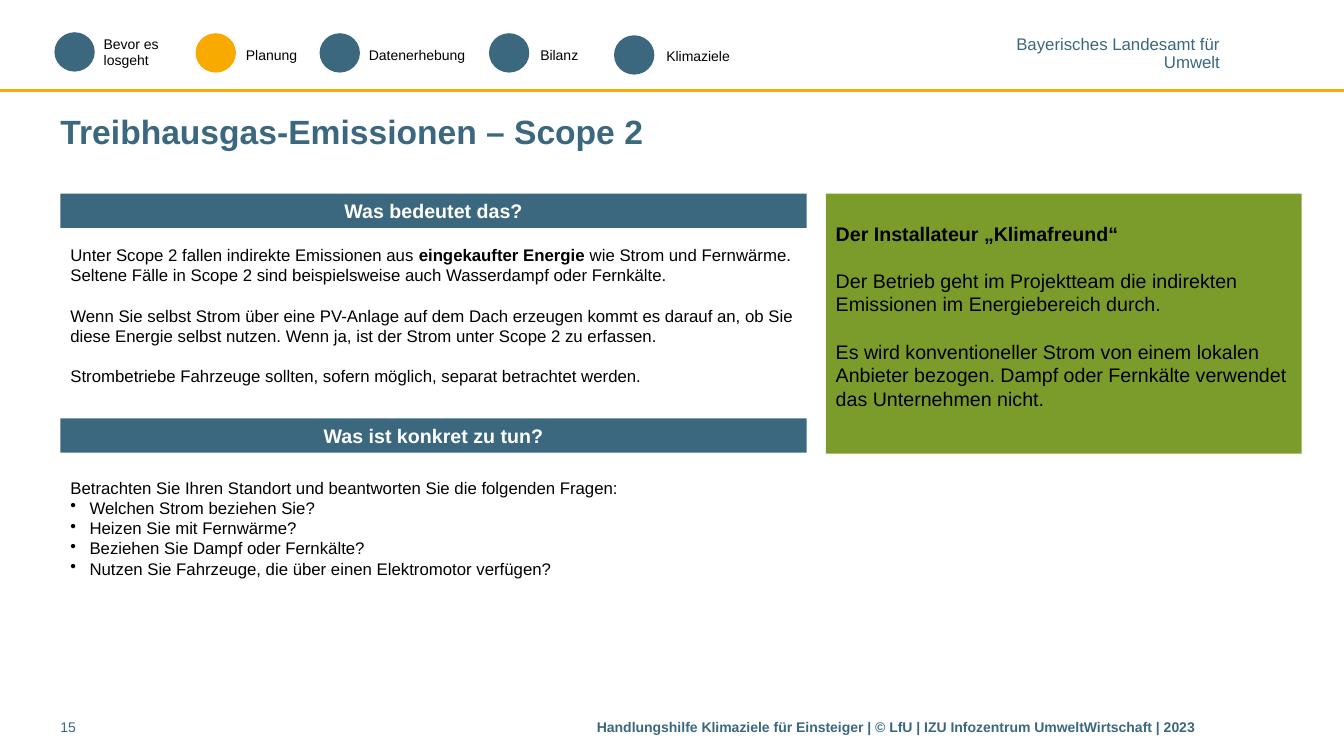
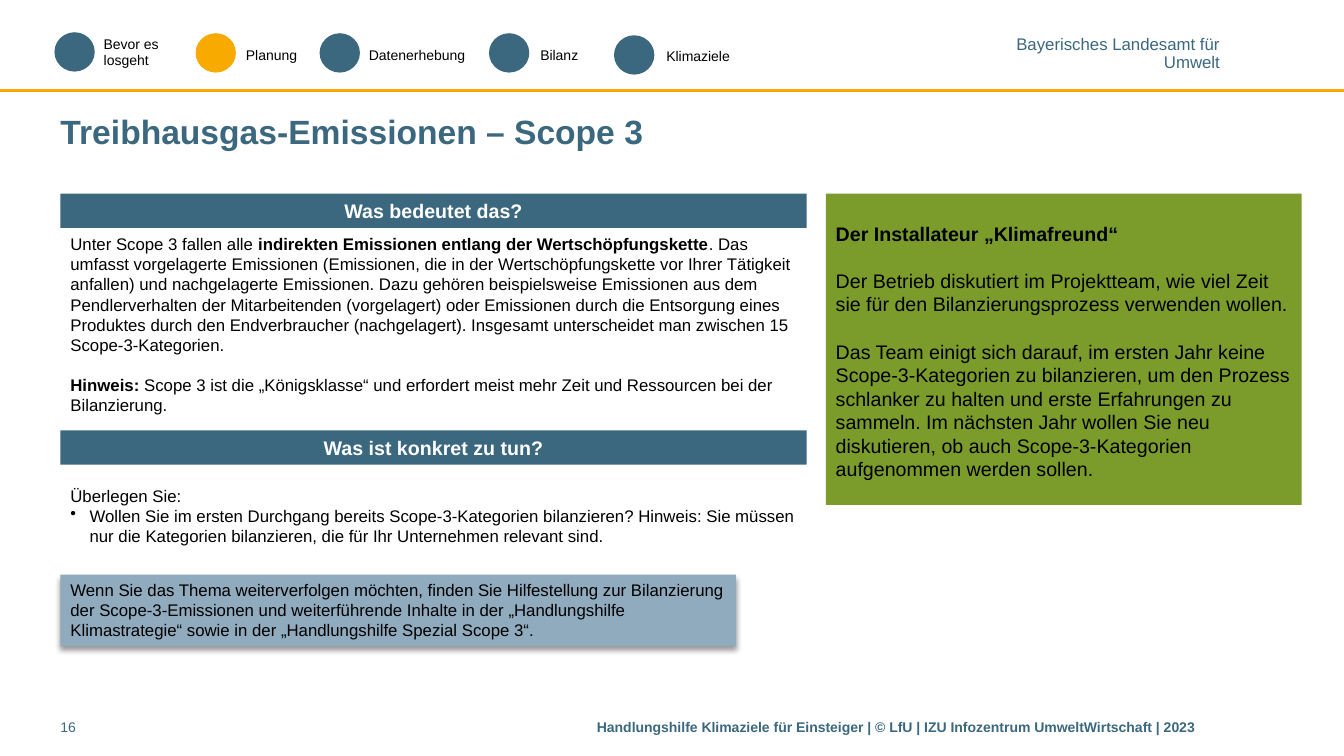
"""Build two slides on Scope 2 and Scope 3 greenhouse gas emissions."""

from dataclasses import dataclass

import pptx
import pptx.dml.color
import pptx.enum.shapes
import pptx.enum.text
import pptx.oxml
import pptx.oxml.ns
import pptx.presentation
import pptx.shapes.autoshape
import pptx.slide
import pptx.util
from pptx.util import Inches

Align = pptx.enum.text.PP_ALIGN
Anchor = pptx.enum.text.MSO_ANCHOR
ShapeKind = pptx.enum.shapes.MSO_SHAPE


@dataclass(frozen=True)
class Theme:
    font: str = "Arial"
    blue: str = "3B687F"
    orange: str = "F9AA00"
    green: str = "7B9C2A"
    pale_blue: str = "90ABBE"
    black: str = "000000"
    white: str = "FFFFFF"
    title_size: int = 24
    heading_size: int = 14
    body_size: int = 12
    small_size: int = 10
    line_height: float = 1.2


@dataclass(frozen=True)
class Box:
    left: float
    top: float
    width: float
    height: float


@dataclass(frozen=True)
class Run:
    text: str
    bold: bool = False


@dataclass(frozen=True)
class Paragraph:
    runs: tuple[Run, ...]
    bullet: bool = False
    gap: bool = False


@dataclass(frozen=True)
class Style:
    size: int
    color: str = "000000"
    align: Align = Align.LEFT
    anchor: Anchor = Anchor.TOP
    side_inset: float = 0.1
    top_inset: float = 0.05
    line_spacing: float = 1.0
    wrap: bool = True


@dataclass(frozen=True)
class Step:
    circle_left: float
    circle_top: float
    label: Box
    lines: tuple[str, ...]
    active: bool = False


@dataclass(frozen=True)
class Content:
    number: int
    title: str
    meaning_top: float
    meaning: tuple[Paragraph, ...]
    task_heading_top: float
    task_top: float
    task: tuple[Paragraph, ...]
    example_height: float
    example: tuple[Paragraph, ...]
    hint: str = ""


def plain(text: str, bold: bool = False, bullet: bool = False, gap: bool = False) -> Paragraph:
    return Paragraph((Run(text, bold),), bullet, gap)


THEME = Theme()
LEFT = 0.6
COLUMN_WIDTH = 7.4
BODY = Style(THEME.body_size)
LABEL = Style(THEME.small_size)
FOOTER = Style(THEME.small_size, THEME.blue, side_inset=0)
TITLE = Style(THEME.title_size, THEME.blue, anchor=Anchor.MIDDLE, side_inset=0)
HEADING = Style(THEME.heading_size, THEME.white, Align.CENTER, Anchor.MIDDLE)
EXAMPLE = Style(THEME.heading_size, top_inset=0.28)
AGENCY = Style(THEME.body_size, THEME.blue, Align.RIGHT, side_inset=0,
               top_inset=0, line_spacing=0.85, wrap=False)

STEPS = (
    Step(0.54, 0.32, Box(0.93, 0.3, 0.82, 0.44), ("Bevor es", "losgeht")),
    Step(1.94, 0.33, Box(2.34, 0.41, 1.49, 0.27), ("Planung",), active=True),
    Step(3.17, 0.33, Box(3.56, 0.41, 1.49, 0.27), ("Datenerhebung",)),
    Step(4.85, 0.33, Box(5.26, 0.41, 1.49, 0.27), ("Bilanz",)),
    Step(6.09, 0.35, Box(6.51, 0.42, 1.49, 0.27), ("Klimaziele",)),
)

SLIDES = (
    Content(
        number=15,
        title="Treibhausgas-Emissionen – Scope 2",
        meaning_top=2.38,
        meaning=(
            Paragraph((
                Run("Unter Scope 2 fallen indirekte Emissionen aus "),
                Run("eingekaufter Energie", True),
                Run(" wie Strom und Fernwärme. Seltene Fälle in Scope 2 sind "
                    "beispielsweise auch Wasserdampf oder Fernkälte."),
            )),
            plain("Wenn Sie selbst Strom über eine PV-Anlage auf dem Dach erzeugen kommt es "
                  "darauf an, ob Sie diese Energie selbst nutzen. Wenn ja, ist der Strom "
                  "unter Scope 2 zu erfassen.", gap=True),
            plain("Strombetriebe Fahrzeuge sollten, sofern möglich, separat betrachtet "
                  "werden.", gap=True),
        ),
        task_heading_top=4.15,
        task_top=4.69,
        task=(
            plain("Betrachten Sie Ihren Standort und beantworten Sie die folgenden Fragen:"),
            plain("Welchen Strom beziehen Sie?", bullet=True),
            plain("Heizen Sie mit Fernwärme?", bullet=True),
            plain("Beziehen Sie Dampf oder Fernkälte?", bullet=True),
            plain("Nutzen Sie Fahrzeuge, die über einen Elektromotor verfügen?", bullet=True),
        ),
        example_height=2.58,
        example=(
            plain("Der Betrieb geht im Projektteam die indirekten Emissionen im "
                  "Energiebereich durch.", gap=True),
            plain("Es wird konventioneller Strom von einem lokalen Anbieter bezogen. Dampf "
                  "oder Fernkälte verwendet das Unternehmen nicht.", gap=True),
        ),
    ),
    Content(
        number=16,
        title="Treibhausgas-Emissionen – Scope 3",
        meaning_top=2.27,
        meaning=(
            Paragraph((
                Run("Unter Scope 3 fallen alle "),
                Run("indirekten Emissionen entlang der Wertschöpfungskette", True),
                Run(". Das umfasst vorgelagerte Emissionen (Emissionen, die in der "
                    "Wertschöpfungskette vor Ihrer Tätigkeit anfallen) und nachgelagerte "
                    "Emissionen. Dazu gehören beispielsweise Emissionen aus dem "
                    "Pendlerverhalten der Mitarbeitenden (vorgelagert) oder Emissionen durch "
                    "die Entsorgung eines Produktes durch den Endverbraucher (nachgelagert). "
                    "Insgesamt unterscheidet man zwischen 15 Scope-3-Kategorien."),
            )),
            Paragraph((
                Run("Hinweis: ", True),
                Run("Scope 3 ist die „Königsklasse“ und erfordert meist mehr Zeit und "
                    "Ressourcen bei der Bilanzierung."),
            ), gap=True),
        ),
        task_heading_top=4.27,
        task_top=4.77,
        task=(
            plain("Überlegen Sie:"),
            plain("Wollen Sie im ersten Durchgang bereits Scope-3-Kategorien bilanzieren? "
                  "Hinweis: Sie müssen nur die Kategorien bilanzieren, die für Ihr "
                  "Unternehmen relevant sind.", bullet=True),
        ),
        example_height=3.09,
        example=(
            plain("Der Betrieb diskutiert im Projektteam, wie viel Zeit sie für den "
                  "Bilanzierungsprozess verwenden wollen.", gap=True),
            plain("Das Team einigt sich darauf, im ersten Jahr keine Scope-3-Kategorien zu "
                  "bilanzieren, um den Prozess schlanker zu halten und erste Erfahrungen zu "
                  "sammeln. Im nächsten Jahr wollen Sie neu diskutieren, ob auch "
                  "Scope-3-Kategorien aufgenommen werden sollen.", gap=True),
        ),
        hint="Wenn Sie das Thema weiterverfolgen möchten, finden Sie Hilfestellung zur "
             "Bilanzierung der Scope-3-Emissionen und weiterführende Inhalte in der "
             "„Handlungshilfe Klimastrategie“ sowie in der „Handlungshilfe Spezial Scope 3“.",
    ),
)


def rgb(color: str) -> pptx.dml.color.RGBColor:
    return pptx.dml.color.RGBColor.from_string(color)


def lengths(box: Box) -> tuple[pptx.util.Length, ...]:
    return Inches(box.left), Inches(box.top), Inches(box.width), Inches(box.height)


def write(shape: pptx.shapes.autoshape.Shape, paragraphs: tuple[Paragraph, ...],
          style: Style) -> None:
    frame = shape.text_frame
    frame.word_wrap = style.wrap
    frame.vertical_anchor = style.anchor
    frame.margin_left = frame.margin_right = Inches(style.side_inset)
    frame.margin_top = Inches(style.top_inset)
    frame.margin_bottom = Inches(min(style.top_inset, 0.05))
    for index, content in enumerate(paragraphs):
        paragraph = frame.add_paragraph() if index else frame.paragraphs[0]
        paragraph.alignment = style.align
        paragraph.line_spacing = style.line_spacing
        if content.gap:
            paragraph.space_before = pptx.util.Pt(round(style.size * THEME.line_height, 1))
        if content.bullet:
            properties = paragraph._p.get_or_add_pPr()
            properties.set("marL", str(Inches(0.19)))
            properties.set("indent", str(-Inches(0.19)))
            bullet = pptx.oxml.ns.qn("a:buChar")
            properties.append(properties.makeelement(bullet, {"char": "•"}))
        for part in content.runs:
            run = paragraph.add_run()
            run.text = part.text
            run.font.name = THEME.font
            run.font.size = pptx.util.Pt(style.size)
            run.font.bold = part.bold
            run.font.color.rgb = rgb(style.color)


def add_text(slide: pptx.slide.Slide, box: Box, paragraphs: tuple[Paragraph, ...],
             style: Style) -> None:
    write(slide.shapes.add_textbox(*lengths(box)), paragraphs, style)


def add_filled(slide: pptx.slide.Slide, box: Box, color: str,
               kind: ShapeKind = ShapeKind.RECTANGLE) -> pptx.shapes.autoshape.Shape:
    shape = slide.shapes.add_shape(kind, *lengths(box))
    shape.shadow.inherit = False
    shape.fill.solid()
    shape.fill.fore_color.rgb = rgb(color)
    shape.line.fill.background()
    return shape


def add_drop_shadow(shape: pptx.shapes.autoshape.Shape) -> None:
    effects = shape._element.spPr.find(pptx.oxml.ns.qn("a:effectLst"))
    effects.append(pptx.oxml.parse_xml(
        f'<a:outerShdw {pptx.oxml.ns.nsdecls("a")} blurRad="{pptx.util.Pt(4)}" '
        f'dist="{pptx.util.Pt(3)}" dir="5400000" algn="t" rotWithShape="0">'
        f'<a:srgbClr val="{THEME.black}"><a:alpha val="40000"/></a:srgbClr></a:outerShdw>'))


def add_frame(slide: pptx.slide.Slide, content: Content) -> None:
    rule = slide.shapes.add_connector(pptx.enum.shapes.MSO_CONNECTOR.STRAIGHT,
                                      0, Inches(0.9), Inches(13.33), Inches(0.9))
    rule.line.color.rgb = rgb(THEME.orange)
    rule.line.width = pptx.util.Pt(2)
    properties = rule._element.spPr
    properties.append(properties.makeelement(pptx.oxml.ns.qn("a:effectLst"), {}))
    add_text(slide, Box(10.07, 0.37, 2.03, 0.34),
             (plain("Bayerisches Landesamt für"), plain("Umwelt")), AGENCY)
    for step in STEPS:
        add_filled(slide, Box(step.circle_left, step.circle_top, 0.4, 0.39),
                   THEME.orange if step.active else THEME.blue, ShapeKind.OVAL)
        add_text(slide, step.label, tuple(plain(line) for line in step.lines), LABEL)
    add_text(slide, Box(LEFT, 1.02, 12.31, 0.55), (plain(content.title, bold=True),), TITLE)
    add_text(slide, Box(LEFT, 7.08, 0.7, 0.31), (plain(str(content.number)),), FOOTER)
    add_text(slide, Box(5.92, 7.08, 6.99, 0.31),
             (plain("Handlungshilfe Klimaziele für Einsteiger | © LfU | "
                    "IZU Infozentrum UmweltWirtschaft | 2023", bold=True),), FOOTER)


def add_section(slide: pptx.slide.Slide, heading: str, heading_top: float, text_top: float,
                text_height: float, paragraphs: tuple[Paragraph, ...]) -> None:
    banner = add_filled(slide, Box(LEFT, heading_top, COLUMN_WIDTH, 0.34), THEME.blue)
    write(banner, (plain(heading, bold=True),), HEADING)
    add_text(slide, Box(LEFT, text_top, COLUMN_WIDTH, text_height), paragraphs, BODY)


def add_content_slide(presentation: pptx.presentation.Presentation, content: Content) -> None:
    slide = presentation.slides.add_slide(presentation.slide_layouts[6])
    add_frame(slide, content)
    add_section(slide, "Was bedeutet das?", 1.92, content.meaning_top,
                content.task_heading_top - content.meaning_top, content.meaning)
    add_section(slide, "Was ist konkret zu tun?", content.task_heading_top,
                content.task_top, 0.9, content.task)
    example = add_filled(slide, Box(8.19, 1.92, 4.72, content.example_height), THEME.green)
    write(example, (plain("Der Installateur „Klimafreund“", bold=True), *content.example), EXAMPLE)
    if content.hint:
        hint = add_filled(slide, Box(LEFT, 5.7, 6.7, 0.71), THEME.pale_blue)
        add_drop_shadow(hint)
        write(hint, (plain(content.hint),), BODY)


def main() -> None:
    presentation = pptx.Presentation()
    presentation.slide_width = Inches(13.33)
    presentation.slide_height = Inches(7.5)
    for content in SLIDES:
        add_content_slide(presentation, content)
    presentation.save("out.pptx")


if __name__ == "__main__":
    main()
